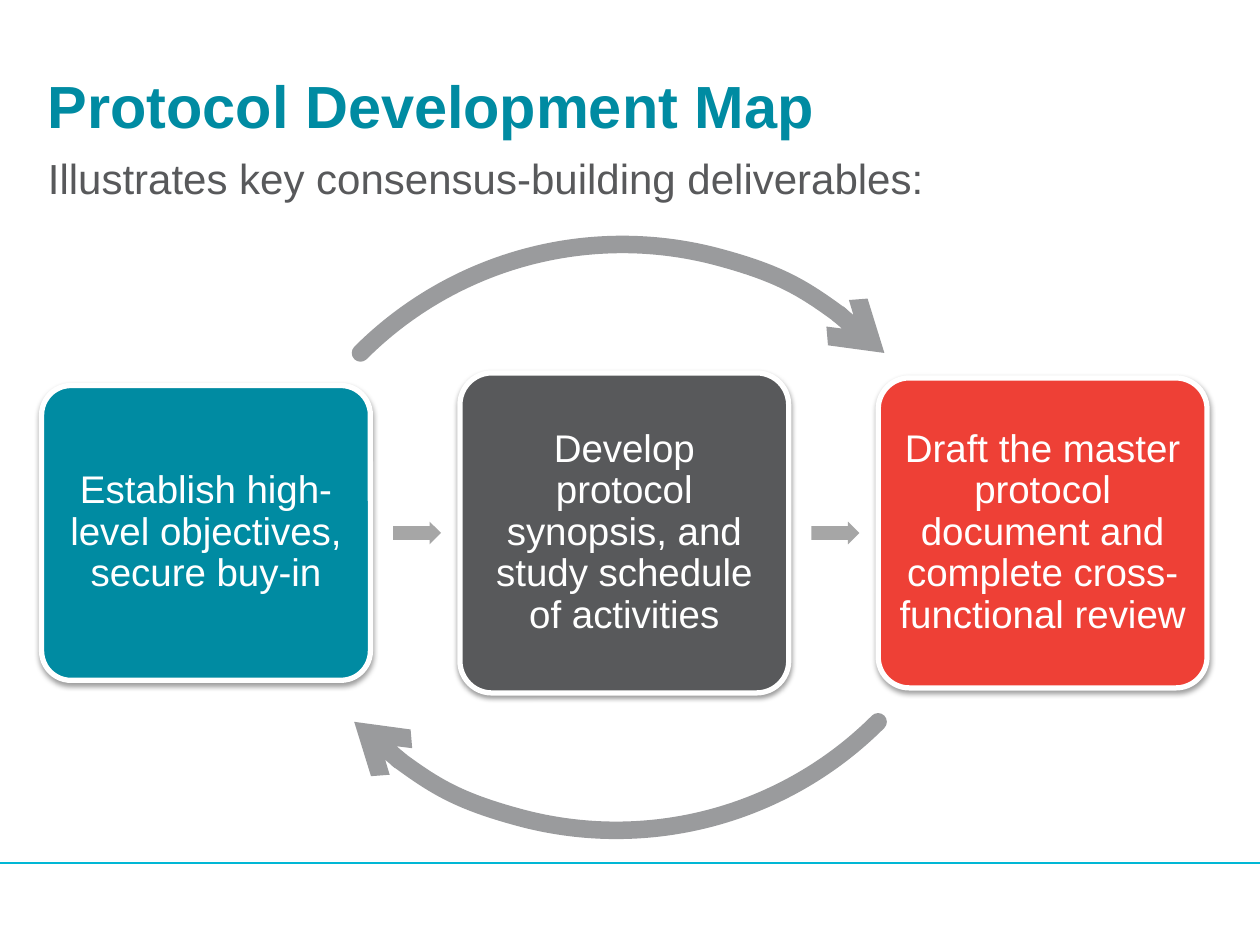
from lxml import etree
from pptx import Presentation
from pptx.dml.color import RGBColor
from pptx.enum import shapes, text
from pptx.oxml import parse_xml
from pptx.oxml.ns import nsdecls, qn
from pptx.util import Inches, Pt

FONT = "Arial"
TEAL, GRAY, RED, WHITE = "008BA2", "58595B", "EE4036", "FFFFFF"
ARROW_GRAY, ARC_GRAY, RULE_BLUE = "A6A6A6", "9A9B9D", "00B7D5"

CARD_WIDTH, CARD_PITCH, CARD_MIDDLE = 2.61, 3.32, 4.23
CARDS = [
    ("Establish high-level objectives, secure buy-in", TEAL, 2.34),
    ("Develop protocol synopsis, and study schedule of activities", GRAY, 2.54),
    ("Draft the master protocol document and complete cross-functional review", RED, 2.46),
]


def color(hex_string):
    return RGBColor.from_string(hex_string)


def add_shadow(shape, opacity, blur, distance):
    """Give the shape a black shadow that falls straight down."""
    shape._element.spPr.append(parse_xml(
        f'<a:effectLst {nsdecls("a")}><a:outerShdw blurRad="{Pt(blur)}" '
        f'dist="{Pt(distance)}" dir="5400000" rotWithShape="0"><a:srgbClr val="000000">'
        f'<a:alpha val="{opacity * 1000}"/></a:srgbClr></a:outerShdw></a:effectLst>'))


def add_filled_shape(slide, kind, left, top, width, height, fill):
    shape = slide.shapes.add_shape(
        kind, Inches(left), Inches(top), Inches(width), Inches(height))
    shape.fill.solid()
    shape.fill.fore_color.rgb = color(fill)
    shape.line.fill.background()
    return shape


def write_text(shape, wording, size, hex_string, margin, bold=False):
    frame = shape.text_frame
    frame.word_wrap = True
    frame.margin_left = frame.margin_right = Inches(margin)
    frame.margin_top = frame.margin_bottom = Inches(margin)
    paragraph = frame.paragraphs[0]
    run = paragraph.add_run()
    run.text = wording
    run.font.name = FONT
    run.font.size = Pt(size)
    run.font.bold = bold
    run.font.color.rgb = color(hex_string)
    return paragraph


def add_heading(slide, left, top, width, height, wording, size, hex_string, bold=False):
    box = slide.shapes.add_textbox(
        Inches(left), Inches(top), Inches(width), Inches(height))
    return write_text(box, wording, size, hex_string, 0, bold)


def add_footer(slide, top):
    band = add_filled_shape(
        slide, shapes.MSO_SHAPE.RECTANGLE, 0, top, 10, 7.5 - top, WHITE)
    add_shadow(band, 35, 3.1, 1.8)
    rule = slide.shapes.add_connector(
        shapes.MSO_CONNECTOR.STRAIGHT,
        Inches(0), Inches(top + 0.02), Inches(10), Inches(top + 0.02))
    rule.line.color.rgb = color(RULE_BLUE)
    rule.line.width = Pt(0.75)
    etree.SubElement(rule._element.spPr, qn("a:effectLst"))


def add_card(slide, left, middle, width, height, wording, fill):
    card = add_filled_shape(
        slide, shapes.MSO_SHAPE.ROUNDED_RECTANGLE,
        left, middle - height / 2, width, height, fill)
    card.adjustments[0] = 0.1
    card.line.color.rgb = color(WHITE)
    card.line.width = Pt(3)
    add_shadow(card, 38, 3.1, 1.6)
    card.text_frame.vertical_anchor = text.MSO_ANCHOR.MIDDLE
    paragraph = write_text(card, wording, 22, WHITE, 0.09)
    paragraph.alignment = text.PP_ALIGN.CENTER
    paragraph.line_spacing = 0.9


def add_step_arrow(slide, left, middle):
    arrow = add_filled_shape(
        slide, shapes.MSO_SHAPE.RIGHT_ARROW, left, middle - 0.09, 0.38, 0.18, ARROW_GRAY)
    arrow.adjustments[0] = 0.6
    arrow.shadow.inherit = False


def add_process(slide, left, middle):
    for index, (wording, fill, height) in enumerate(CARDS):
        card_left = left + index * CARD_PITCH
        add_card(slide, card_left, middle, CARD_WIDTH, height, wording, fill)
        if index < len(CARDS) - 1:
            add_step_arrow(slide, card_left + CARD_WIDTH + 0.18, middle)


def add_loop_arc(slide, left, top, size, rotation):
    """Draw a quarter circle that ends in an open arrowhead."""
    arc = slide.shapes.add_shape(
        shapes.MSO_SHAPE.ARC, Inches(left), Inches(top), Inches(size), Inches(size))
    arc.rotation = rotation
    arc.fill.background()
    arc.shadow.inherit = False
    arc.line.color.rgb = color(ARC_GRAY)
    arc.line.width = Pt(10)
    line = arc.line._get_or_add_ln()
    line.set("cap", "rnd")
    etree.SubElement(line, qn("a:tailEnd"), type="arrow")


def main():
    presentation = Presentation()
    presentation.slide_width, presentation.slide_height = Inches(10), Inches(7.5)
    slide = presentation.slides.add_slide(presentation.slide_layouts[6])
    add_footer(slide, 6.83)
    add_process(slide, 0.33, CARD_MIDDLE)
    add_heading(slide, 0.38, 0.55, 9.25, 0.84, "Protocol Development Map", 34, TEAL, bold=True)
    add_loop_arc(slide, 1.95, 0.71, 5.88, 135)
    subtitle = add_heading(
        slide, 0.38, 1.24, 9.25, 0.42,
        "Illustrates key consensus-building deliverables:", 24, GRAY)
    subtitle.line_spacing = 0.95
    add_loop_arc(slide, 2, 1.94, 5.88, 315)
    presentation.save("out.pptx")


if __name__ == "__main__":
    main()
